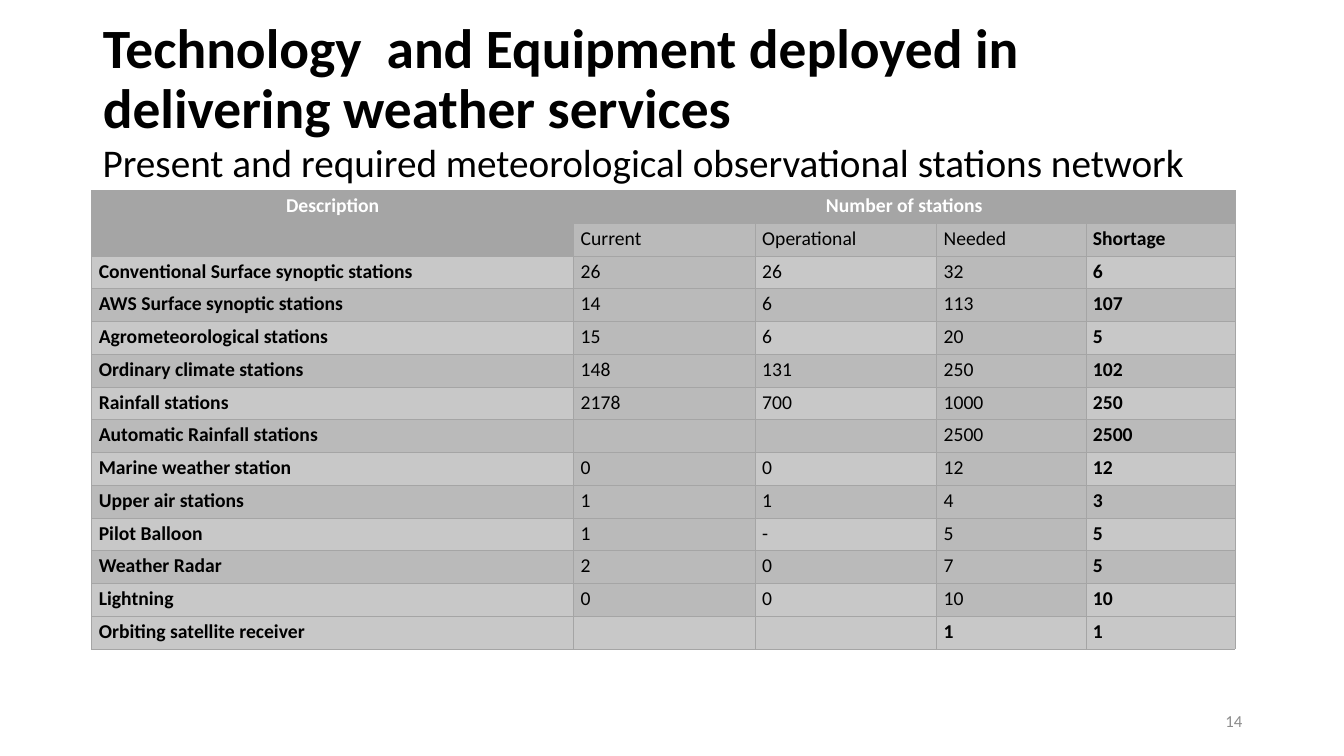
from lxml.etree import SubElement
from pptx import Presentation
from pptx.dml.color import RGBColor
from pptx.enum.text import MSO_ANCHOR, MSO_AUTO_SIZE, PP_ALIGN
from pptx.oxml.ns import qn
from pptx.util import Inches, Pt

GREY, DARK, LIGHT = "A5A5A5", "BABABA", "C8C8C8"
WIDTHS = [4.78, 1.8, 1.8, 1.48, 1.48]
ROW = 0.325
HEADS = ["", "Current", "Operational", "Needed", "Shortage"]
STATIONS = [
    ["Conventional Surface synoptic stations", "26", "26", "32", "6"],
    ["AWS Surface synoptic stations", "14", "6", "113", "107"],
    ["Agrometeorological stations", "15", "6", "20", "5"],
    ["Ordinary climate stations", "148", "131", "250", "102"],
    ["Rainfall stations", "2178", "700", "1000", "250"],
    ["Automatic Rainfall stations", "", "", "2500", "2500"],
    ["Marine weather station", "0", "0", "12", "12"],
    ["Upper air stations", "1", "1", "4", "3"],
    ["Pilot Balloon", "1", "-", "5", "5"],
    ["Weather Radar", "2", "0", "7", "5"],
    ["Lightning", "0", "0", "10", "10"],
    ["Orbiting satellite receiver", "", "", "1", "1"],
]


def color(code):
    return RGBColor.from_string(code)


def write(frame, text, size=14, ink="000000", bold=False,
          align=PP_ALIGN.LEFT, line=None, after=None):
    para = frame.paragraphs[0]
    para.alignment = align
    para.line_spacing = line
    if after is not None:
        para.space_after = Pt(after)
    run = para.add_run()
    run.text = text
    font = run.font
    font.name, font.size, font.bold = "Calibri", Pt(size), bold
    font.color.rgb = color(ink)


class Deck:
    def __init__(self):
        self.show = Presentation()
        self.show.slide_width = Inches(13.33)
        self.show.slide_height = Inches(7.5)
        self.slide = self.show.slides.add_slide(self.show.slide_layouts[5])

    def title(self, text, left, top, width, height, **style):
        shape = self.slide.shapes.title
        shape.left, shape.top = Inches(left), Inches(top)
        shape.width, shape.height = Inches(width), Inches(height)
        self.fit(shape.text_frame, MSO_ANCHOR.MIDDLE)
        write(shape.text_frame, text, **style)

    def label(self, text, left, top, width, height,
              anchor=MSO_ANCHOR.TOP, **style):
        box = self.slide.shapes.add_textbox(
            Inches(left), Inches(top), Inches(width), Inches(height))
        self.fit(box.text_frame, anchor)
        write(box.text_frame, text, **style)

    def fit(self, frame, anchor):
        frame.word_wrap = True
        frame.auto_size = MSO_AUTO_SIZE.NONE
        frame.vertical_anchor = anchor

    def grid(self, left, top, widths, count):
        table = self.slide.shapes.add_table(
            count, len(widths), Inches(left), Inches(top),
            Inches(sum(widths)), Inches(ROW * count)).table
        table.first_row = table.horz_banding = False
        for col, width in zip(table.columns, widths):
            col.width = Inches(width)
        for row in table.rows:
            row.height = Inches(ROW)
        return table

    def cell(self, cell, text, fill, **style):
        cell.margin_left = cell.margin_right = Inches(0.07)
        cell.margin_top = cell.margin_bottom = 0
        props = cell._tc.get_or_add_tcPr()
        for side in ("a:lnL", "a:lnR", "a:lnT", "a:lnB"):
            edge = SubElement(props, qn(side), w=str(Pt(0.5)))
            paint = SubElement(edge, qn("a:solidFill"))
            SubElement(paint, qn("a:srgbClr"), val=GREY)
        cell.fill.solid()
        cell.fill.fore_color.rgb = color(fill)
        if text:
            write(cell.text_frame, text, line=1.15, after=10, **style)


def main():
    deck = Deck()

    # Title and subtitle
    deck.title("Technology  and Equipment deployed in delivering weather services",
               0.92, 0.4, 11.5, 0.8, size=39.6, bold=True, line=0.9)
    deck.label("Present and required meteorological observational stations network",
               0.92, 1.38, 11.5, 5.37, size=28, line=0.9)

    # Slide number
    deck.label("14", 9.42, 6.95, 3, 0.4, anchor=MSO_ANCHOR.MIDDLE,
               size=12, ink="8C8C8C", align=PP_ALIGN.RIGHT)

    # Table header, with merged cells
    rows = [["Description", "Number of stations", "", "", ""], HEADS] + STATIONS
    table = deck.grid(0.91, 1.89, WIDTHS, len(rows))
    table.cell(0, 0).merge(table.cell(1, 0))
    table.cell(0, 1).merge(table.cell(0, 4))

    # Cells: every other row is light in its even columns, the last row throughout
    last = len(rows) - 1
    for r, row in enumerate(rows):
        for c, text in enumerate(row):
            head = r == 0 or (r == 1 and c == 0)
            pale = r == last or (r > 1 and r % 2 == 0 and c % 2 == 0)
            deck.cell(table.cell(r, c), text,
                      GREY if head else LIGHT if pale else DARK,
                      ink="FFFFFF" if head else "000000",
                      bold=head or c in (0, 4) or r == last,
                      align=PP_ALIGN.CENTER if head else PP_ALIGN.JUSTIFY)

    deck.show.save("out.pptx")


if __name__ == "__main__":
    main()
